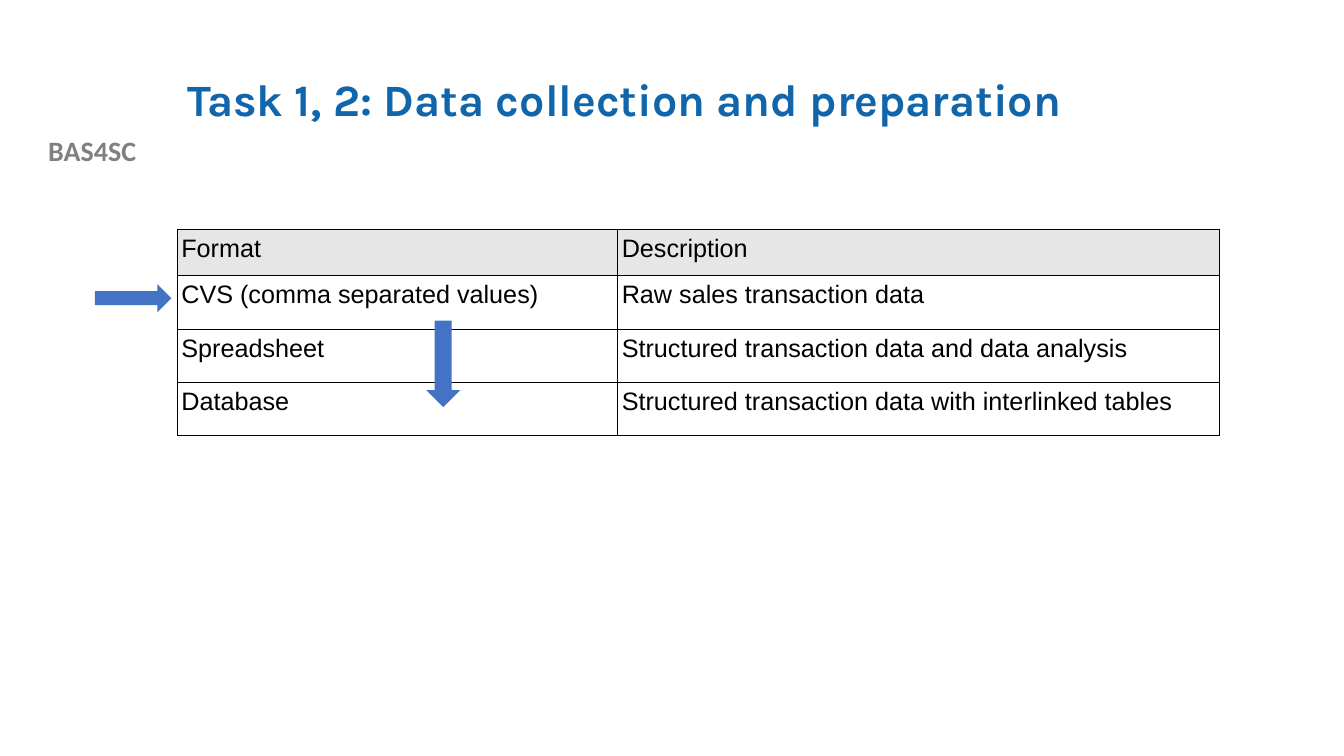
"""Build the slide on data collection and preparation with its table of file formats."""
from dataclasses import dataclass

from lxml.etree import SubElement
from pptx import Presentation
from pptx.dml.color import RGBColor as Color
from pptx.enum.shapes import MSO_SHAPE as Preset
from pptx.enum.text import MSO_ANCHOR as Anchor, MSO_AUTO_SIZE as AutoSize, PP_ALIGN as Align
from pptx.oxml.ns import qn
from pptx.util import Cm, Pt


@dataclass(frozen=True)
class Theme:
    title_color: Color = Color(0x10, 0x65, 0xAB)
    label_color: Color = Color(0x80, 0x80, 0x80)
    text_color: Color = Color(0, 0, 0)
    header_fill: Color = Color(0xE7, 0xE6, 0xE6)
    arrow_fill: Color = Color(0x44, 0x72, 0xC4)
    border_color: str = "000000"
    border_width: Pt = Pt(0.57)
    title_size: Pt = Pt(32)
    label_size: Pt = Pt(20)
    table_size: Pt = Pt(18)


theme = Theme()


def style_text(para, name, size, color, bold=False):
    """Format every run of a paragraph."""
    for span in para.runs:
        span.font.name = name
        span.font.size = size
        span.font.bold = bold
        span.font.color.rgb = color


def add_borders(cell):
    """Draw a thin solid line on each side of a cell."""
    properties = cell._tc.get_or_add_tcPr()
    for side in ("a:lnL", "a:lnR", "a:lnT", "a:lnB"):
        line = SubElement(properties, qn(side), w=str(int(theme.border_width)))
        fill = SubElement(line, qn("a:solidFill"))
        SubElement(fill, qn("a:srgbClr"), val=theme.border_color)


deck = Presentation()
deck.slide_width, deck.slide_height = Cm(33.87), Cm(19.05)
page = deck.slides.add_slide(deck.slide_layouts[5])

label = page.shapes.add_textbox(Cm(0), Cm(3.25), Cm(4.65), Cm(1.09))
label.text_frame.word_wrap = True
label.text_frame.text = "BAS4SC"
para = label.text_frame.paragraphs[0]
para.alignment = Align.CENTER
style_text(para, "Calibri", theme.label_size, theme.label_color, bold=True)

title = page.shapes.title
title.left, title.top, title.width, title.height = Cm(4.47), Cm(1.02), Cm(27.08), Cm(3.1)
title.text_frame.text = "Task 1, 2: Data collection and preparation"
title.text_frame.auto_size = AutoSize.NONE
title.text_frame.vertical_anchor = Anchor.MIDDLE
para = title.text_frame.paragraphs[0]
para.alignment = Align.LEFT
para.line_spacing = 0.9
style_text(para, "Karla", theme.title_size, theme.title_color, bold=True)

formats = [
    ("Format", "Description"),
    ("CVS (comma separated values)", "Raw sales transaction data"),
    ("Spreadsheet", "Structured transaction data and data analysis"),
    ("Database", "Structured transaction data with interlinked tables"),
]
column_widths = [Cm(11.1), Cm(15.16)]
row_heights = [Cm(1.18)] + [Cm(1.34)] * 3
table = page.shapes.add_table(
    len(formats), len(column_widths), Cm(4.47), Cm(5.77), sum(column_widths), sum(row_heights)
).table
table.first_row = False
table.horz_banding = False
for column, width in zip(table.columns, column_widths):
    column.width = width
for index, (row, height, texts) in enumerate(zip(table.rows, row_heights, formats)):
    row.height = height
    for cell, text in zip(row.cells, texts):
        cell.text_frame.text = text
        cell.margin_left = cell.margin_right = Cm(0.1)
        cell.margin_top = cell.margin_bottom = Cm(0.13)
        style_text(cell.text_frame.paragraphs[0], "Arial", theme.table_size, theme.text_color)
        add_borders(cell)
        if index == 0:
            cell.fill.solid()
            cell.fill.fore_color.rgb = theme.header_fill
        else:
            cell.fill.background()

arrows = [
    (Preset.RIGHT_ARROW, 2.39, 7.16, 1.93, 0.71),
    (Preset.DOWN_ARROW, 10.74, 8.08, 0.86, 2.18),
]
for preset, *place in arrows:
    arrow = page.shapes.add_shape(preset, *map(Cm, place))
    arrow.shadow.inherit = False
    arrow.fill.solid()
    arrow.fill.fore_color.rgb = theme.arrow_fill
    arrow.line.fill.background()

deck.save("out.pptx")
